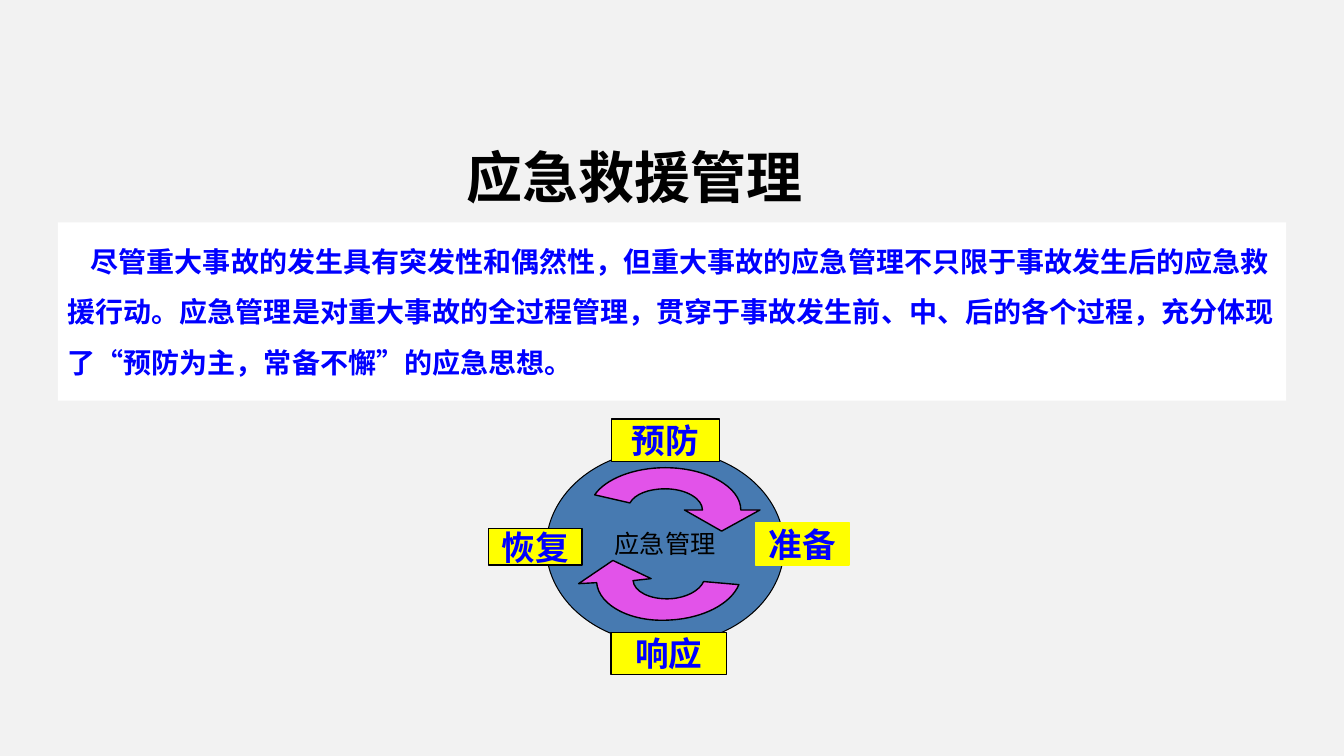
"""Build the slide on emergency rescue management with its four-phase cycle."""
from lxml.etree import SubElement
from pptx import Presentation
from pptx.dml.color import RGBColor
from pptx.enum.shapes import MSO_SHAPE as Preset
from pptx.enum.text import MSO_ANCHOR as Anchor, PP_ALIGN as Align
from pptx.oxml.ns import qn
from pptx.util import Pt

FONT = "Karla"
BLUE, YELLOW, BLACK, WHITE = "0000FF", "FFFF00", "000000", "FFFFFF"
PINK, STEEL, GREY = "E253E9", "477AB1", "F2F2F2"

TITLE = ("应急救援管理", (300, 92.9, 306.7, 65.5))
INTRO = (
    "尽管重大事故的发生具有突发性和偶然性，但重大事故的应急管理不只限于事故发生后的应急救援行动。"
    "应急管理是对重大事故的全过程管理，贯穿于事故发生前、中、后的各个过程，"
    "充分体现了“预防为主，常备不懈”的应急思想。",
    (41.3, 158.9, 877.5, 127.2),
)
DISC = (390.2, 321.1, 169.9, 139)
HUB = ("应急管理", (417.6, 342.7, 115.2, 91.4))
PHASES = [
    ("响应", (436.6, 451.6, 82.2, 30.2), BLACK),
    ("准备", (539.6, 373.3, 67, 30.2), YELLOW),
    ("预防", (436.6, 299.4, 77.2, 30.2), BLACK),
    ("恢复", (348.9, 377.6, 67, 25.9), BLACK),
]
# Each step holds one point for a line or three for a cubic curve.
ARROWS = [
    ((452.2, 414.7), [
        [(452.9, 422.6), (464.4, 428.4), (478.8, 427.7)],
        [(490.3, 427), (499.7, 421.9), (502.6, 415.4)],
        [(527.8, 417.6)],
        [(522, 431.3), (502.6, 441.4), (479.5, 442.8)],
        [(451.4, 445), (427.7, 432.7), (426.2, 416.2)],
        [(413.3, 416.9)], [(437.8, 400.3)], [(465.1, 413.3)],
    ]),
    ((501.8, 364.3), [
        [(501.8, 356.4), (490.3, 349.2), (475.2, 349.2)],
        [(463.7, 349.2), (453.6, 352.8), (450, 359.3)],
        [(424.8, 353.5)],
        [(432.7, 342), (452.9, 334.1), (475.2, 334.1)],
        [(504.7, 334.1), (529.2, 347.8), (529.2, 364.3)],
        [(542.9, 364.3)], [(515.5, 379.4)], [(488.9, 364.3)],
    ]),
]


def rgb(code):
    return RGBColor.from_string(code)


def paint(shape, fill=None, line=None, width=1):
    shape.shadow.inherit = False
    if fill:
        shape.fill.solid()
        shape.fill.fore_color.rgb = rgb(fill)
    else:
        shape.fill.background()
    if line:
        shape.line.color.rgb = rgb(line)
        shape.line.width = Pt(width)
    else:
        shape.line.fill.background()
    return shape


def add_preset(slide, preset, box, fill=None, line=None, width=1):
    return paint(slide.shapes.add_shape(preset, *map(Pt, box)), fill, line, width)


def write(shape, text, size, color, bold=True, align=Align.CENTER, anchor=Anchor.MIDDLE, wrap=False):
    frame = shape.text_frame
    frame.word_wrap = wrap
    frame.vertical_anchor = anchor
    paragraph = frame.paragraphs[0]
    paragraph.alignment = align
    run = paragraph.add_run()
    run.text = text
    run.font.name, run.font.size, run.font.bold = FONT, Pt(size), bold
    run.font.color.rgb = rgb(color)
    return paragraph


def add_arrow(slide, start, steps):
    builder = slide.shapes.build_freeform(*map(Pt, start))
    builder.add_line_segments([(Pt(x), Pt(y)) for step in steps for x, y in step], close=True)
    arrow = paint(builder.convert_to_shape(), PINK, BLACK)
    outline = next(arrow._element.iter(qn("a:path")))
    segments = iter(outline.findall(qn("a:lnTo")))
    for step in steps:
        group = [next(segments) for _ in step]
        if len(group) == 3:
            curve = SubElement(outline, qn("a:cubicBezTo"))
            group[0].addprevious(curve)
            for segment in group:
                curve.append(segment[0])
                outline.remove(segment)


def main():
    deck = Presentation()
    deck.slide_width, deck.slide_height = Pt(960), Pt(540)
    slide = deck.slides.add_slide(deck.slide_layouts[6])
    slide.background.fill.solid()
    slide.background.fill.fore_color.rgb = rgb(GREY)

    add_preset(slide, Preset.OVAL, DISC, STEEL, BLACK, 0.75)
    for start, steps in ARROWS:
        add_arrow(slide, start, steps)
    for phase, box, border in PHASES:
        write(add_preset(slide, Preset.RECTANGLE, box, YELLOW, border), phase, 24, BLUE)
    hub, hub_box = HUB
    write(add_preset(slide, Preset.OVAL, hub_box), hub, 18, BLACK, bold=False)

    intro, intro_box = INTRO
    panel = add_preset(slide, Preset.RECTANGLE, intro_box, WHITE)
    paragraph = write(panel, intro, 20, BLUE, align=Align.LEFT, anchor=Anchor.TOP, wrap=True)
    paragraph.line_spacing = 1.5
    paragraph._p.get_or_add_pPr().set("indent", str(Pt(16.5)))

    title, title_box = TITLE
    write(slide.shapes.add_textbox(*map(Pt, title_box)), title, 40, BLACK, wrap=True)
    deck.save("out.pptx")


if __name__ == "__main__":
    main()
